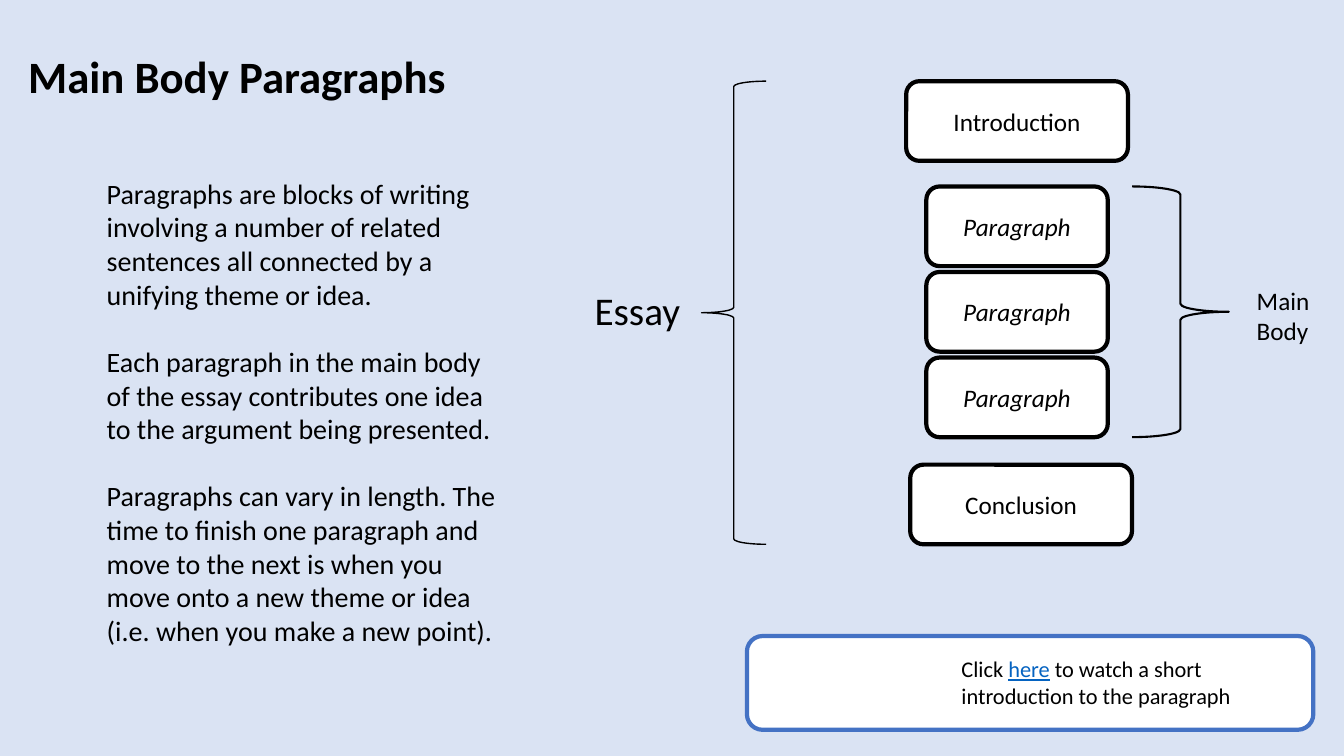
"""Build a slide showing where main body paragraphs sit in an essay."""
from pptx import Presentation
from pptx.dml.color import RGBColor
from pptx.enum import shapes, text
from pptx.util import Pt

BLACK = RGBColor(0x00, 0x00, 0x00)
WHITE = RGBColor(0xFF, 0xFF, 0xFF)
BLUE = RGBColor(0x44, 0x72, 0xC4)
LINK_BLUE = RGBColor(0x05, 0x63, 0xC1)
BACKGROUND = RGBColor(0xDA, 0xE3, 0xF3)
FONT = "Calibri"

TITLE = "Main Body Paragraphs"
EXPLANATION = [
    "Paragraphs are blocks of writing involving a number of related sentences "
    "all connected by a unifying theme or idea.",
    "Each paragraph in the main body of the essay contributes one idea to the "
    "argument being presented.",
    "Paragraphs can vary in length. The time to finish one paragraph and move to "
    "the next is when you move onto a new theme or idea "
    "(i.e. when you make a new point).",
]
INVITATION = ["Click ", "here", " to watch a short introduction to the paragraph"]
LINK_WORD = "here"
BODY_PARTS = ["Paragraph"] * 3

PART_HEIGHT = 56.9
END_WIDTH, BODY_WIDTH = 158.4, 129.6
INTRODUCTION_TOP, BODY_TOP, CONCLUSION_TOP = 58, 133.2, 331.9
BODY_LEFT, BODY_STEP = 661.7, 61.1


def style(paragraph, size, bold=None, italic=None):
    font = paragraph.font
    font.name, font.size = FONT, Pt(size)
    font.bold, font.italic = bold, italic
    font.color.rgb = BLACK


def add_text(slide, box, paragraphs, size, bold=None, gap=0):
    frame = slide.shapes.add_textbox(*map(Pt, box)).text_frame
    frame.word_wrap = True
    for index, runs in enumerate(paragraphs):
        paragraph = frame.paragraphs[0] if index == 0 else frame.add_paragraph()
        style(paragraph, size, bold)
        paragraph.space_before = Pt(gap if index else 0)
        for words in runs:
            run = paragraph.add_run()
            run.text = words
            if words == LINK_WORD:
                run.font.color.rgb = LINK_BLUE
                run.font.underline = True


def add_outline(slide, kind, box, line_width, color=BLACK):
    shape = slide.shapes.add_shape(kind, *map(Pt, box))
    shape.shadow.inherit = False
    shape.fill.background()
    shape.line.color.rgb = color
    shape.line.width = Pt(line_width)
    return shape


def add_card(slide, box, label="", italic=None, color=BLACK):
    shape = add_outline(slide, shapes.MSO_SHAPE.ROUNDED_RECTANGLE, box, 3, color)
    shape.fill.solid()
    shape.fill.fore_color.rgb = WHITE
    if label:
        frame = shape.text_frame
        frame.text = label
        frame.vertical_anchor = text.MSO_ANCHOR.MIDDLE
        frame.paragraphs[0].alignment = text.PP_ALIGN.CENTER
        style(frame.paragraphs[0], 18, italic=italic)


def main():
    presentation = Presentation()
    presentation.slide_width, presentation.slide_height = Pt(960), Pt(540)
    slide = presentation.slides.add_slide(presentation.slide_layouts[6])
    slide.background.fill.solid()
    slide.background.fill.fore_color.rgb = BACKGROUND

    add_text(slide, (13, 31, 602.6, 46), [[TITLE]], 32, bold=True)
    add_text(slide, (69.1, 122.4, 301.7, 346.3),
             [[words] for words in EXPLANATION], 20, gap=24)

    add_text(slide, (417.6, 200.9, 128.9, 41), [["Essay"]], 28)
    essay_height = CONCLUSION_TOP + PART_HEIGHT - INTRODUCTION_TOP
    add_outline(slide, shapes.MSO_SHAPE.LEFT_BRACE,
                (501.1, INTRODUCTION_TOP, 46.1, essay_height), 1)

    add_card(slide, (647.3, INTRODUCTION_TOP, END_WIDTH, PART_HEIGHT), "Introduction")
    for index, label in enumerate(BODY_PARTS):
        top = BODY_TOP + index * BODY_STEP
        add_card(slide, (BODY_LEFT, top, BODY_WIDTH, PART_HEIGHT), label, italic=True)
    add_card(slide, (650.2, CONCLUSION_TOP, END_WIDTH, PART_HEIGHT), "Conclusion")

    body_height = (len(BODY_PARTS) - 1) * BODY_STEP + PART_HEIGHT
    add_outline(slide, shapes.MSO_SHAPE.RIGHT_BRACE,
                (808.6, BODY_TOP, 69.1, body_height), 1.5)
    add_text(slide, (890.6, 200.2, 56.9, 51.1), [["Main Body"]], 18)

    add_card(slide, (533.5, 454.3, 404.6, 67), color=BLUE)
    add_text(slide, (679.7, 464.4, 221.8, 46.1), [INVITATION], 16)
    presentation.save("out.pptx")


if __name__ == "__main__":
    main()
